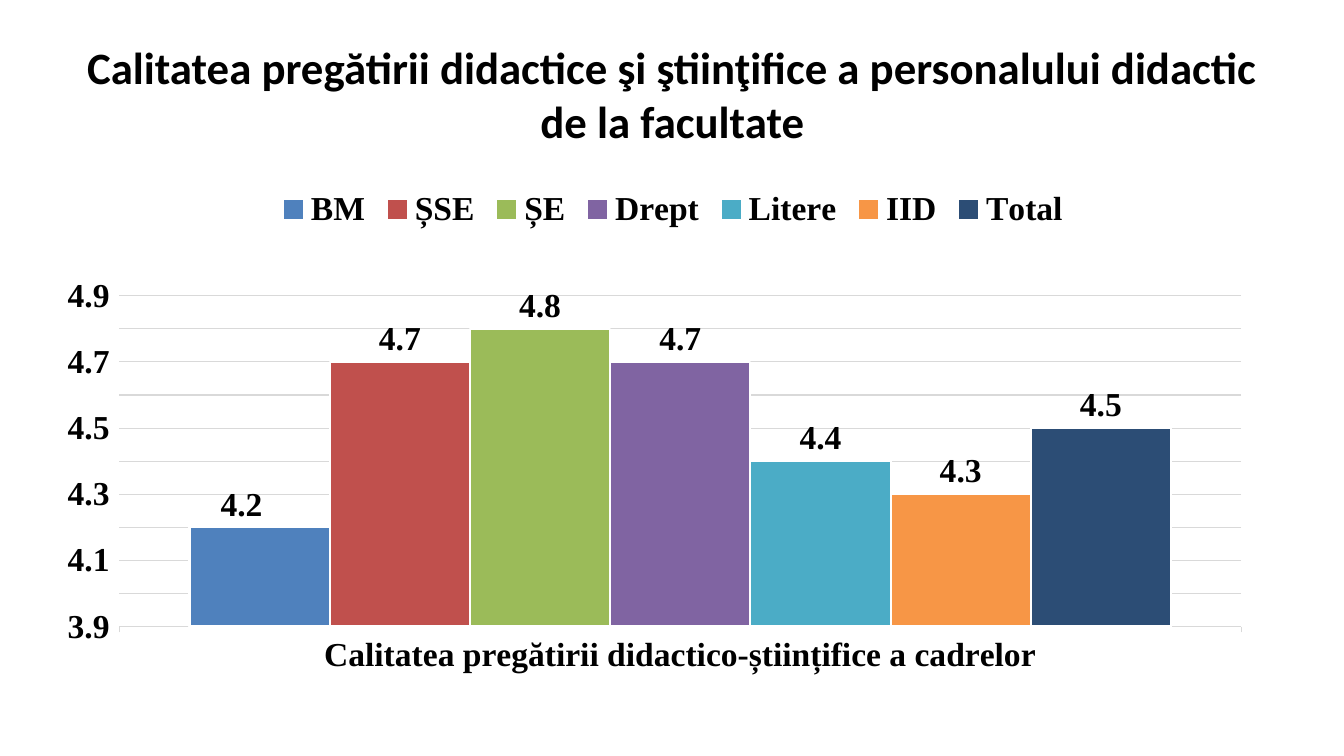
from lxml import etree
from pptx import Presentation
from pptx.chart.data import CategoryChartData
from pptx.dml.color import RGBColor
from pptx.enum.chart import XL_CHART_TYPE as ChartType, XL_LABEL_POSITION as LabelPosition
from pptx.enum.chart import XL_LEGEND_POSITION as LegendPosition, XL_TICK_MARK as TickMark
from pptx.enum.text import MSO_ANCHOR as Anchor, PP_ALIGN as Align
from pptx.oxml.ns import qn
from pptx.util import Inches, Pt

# Content
TITLE = "Calitatea pregătirii didactice şi ştiinţifice a personalului didactic de la facultate"
CATEGORY = "Calitatea pregătirii didactico-științifice a cadrelor"
SCORES = [
    ("BM", 4.2),
    ("ȘSE", 4.7),
    ("ȘE", 4.8),
    ("Drept", 4.7),
    ("Litere", 4.4),
    ("IID", 4.3),
    ("Total", 4.5),
]
COLORS = {
    "BM": "4F81BD", "ȘSE": "C0504D", "ȘE": "9BBB59", "Drept": "8064A2",
    "Litere": "4BACC6", "IID": "F79646", "Total": "2C4D75",
    "text": "000000", "grid": "D9D9D9", "bar edge": "FFFFFF",
}
PLOT_AREA = {"x": 0.042, "y": 0.24, "w": 0.928, "h": 0.665}
FIRST_LABEL_SHIFT = {"x": -0.015, "y": 0}


def color(name):
    return RGBColor.from_string(COLORS[name])


def style_font(font, name, size):
    font.name, font.size, font.bold = name, Pt(size), True
    font.color.rgb = color("text")


def style_line(line, name, width):
    line.color.rgb = color(name)
    line.width = Pt(width)


def manual_layout(values, inner=False):
    layout = etree.Element(qn("c:layout"))
    manual = etree.SubElement(layout, qn("c:manualLayout"))
    settings = {}
    if inner:
        settings = {"layoutTarget": "inner", "xMode": "edge", "yMode": "edge"}
    for tag, value in {**settings, **values}.items():
        etree.SubElement(manual, qn(f"c:{tag}")).set("val", str(value))
    return layout


presentation = Presentation()
presentation.slide_width, presentation.slide_height = Inches(13.33), Inches(7.5)
slide = presentation.slides.add_slide(presentation.slide_layouts[6])

# Title
title = slide.shapes.add_textbox(Inches(0.67), Inches(0.3), Inches(12), Inches(1.25))
text_frame = title.text_frame
text_frame.word_wrap = True
text_frame.vertical_anchor = Anchor.MIDDLE
text_frame.text = TITLE
paragraph = text_frame.paragraphs[0]
paragraph.alignment = Align.CENTER
style_font(paragraph.runs[0].font, "Calibri", 32)

# Chart
chart_data = CategoryChartData(number_format="0.0")
chart_data.categories = [CATEGORY]
for name, score in SCORES:
    chart_data.add_series(name, [score])
chart = slide.shapes.add_chart(
    ChartType.COLUMN_CLUSTERED, Inches(0.67), Inches(1.75), Inches(12), Inches(4.95), chart_data
).chart
chart.has_title = False
style_font(chart.font, "Times New Roman", 24)

# Legend
chart.has_legend = True
chart.legend.position = LegendPosition.TOP
chart.legend.include_in_layout = False
style_font(chart.legend.font, "Times New Roman", 24)

# Axes
for axis in (chart.category_axis, chart.value_axis):
    axis.major_tick_mark = TickMark.OUTSIDE
    style_font(axis.tick_labels.font, "Times New Roman", 24)
style_line(chart.category_axis.format.line, "grid", 0.75)
value_axis = chart.value_axis
value_axis.minimum_scale, value_axis.maximum_scale = 3.9, 4.9
value_axis.major_unit = 0.1
value_axis.format.line.fill.background()
style_line(value_axis.major_gridlines.format.line, "grid", 0.75)

# Bars and their values
plot = chart.plots[0]
plot.gap_width, plot.overlap = 100, 0
plot.vary_by_categories = False
for series in plot.series:
    series.format.fill.solid()
    series.format.fill.fore_color.rgb = color(series.name)
    style_line(series.format.line, "bar edge", 1.5)
    labels = series.data_labels
    labels.show_value = True
    labels.position = LabelPosition.OUTSIDE_END
    style_font(labels.font, "Times New Roman", 24)

# The first value sits a little left of its bar's centre
first_series = plot.series[0]
first_label = first_series.points[0].data_label
style_font(first_label.font, "Times New Roman", 24)
first_label.position = LabelPosition.OUTSIDE_END
label_index = first_series._element.find(f".//{qn('c:dLbl')}/{qn('c:idx')}")
label_index.addnext(manual_layout(FIRST_LABEL_SHIFT))

# Plot area placement
plot_area = chart._chartSpace.find(f".//{qn('c:plotArea')}")
for layout in plot_area.findall(qn("c:layout")):
    plot_area.remove(layout)
plot_area.insert(0, manual_layout(PLOT_AREA, inner=True))

presentation.save("out.pptx")
